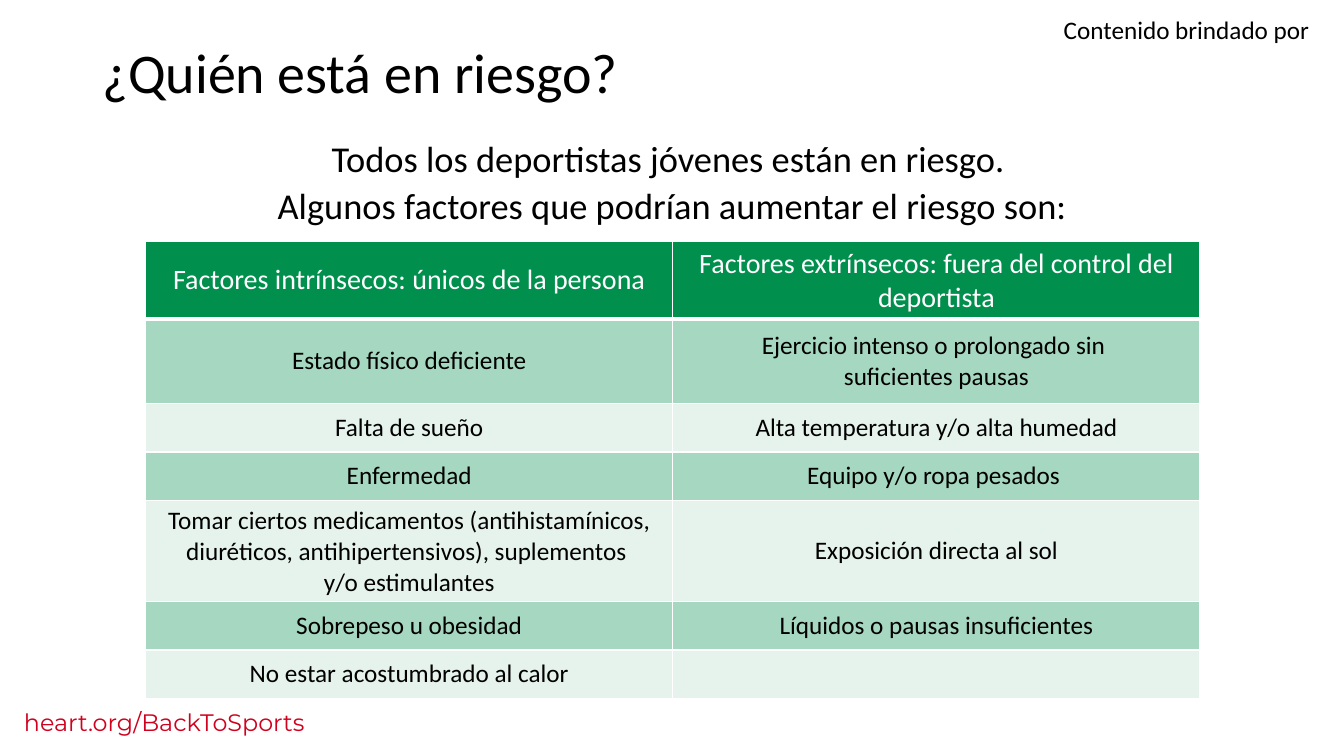
from lxml import etree
from pptx import Presentation
from pptx.dml.color import RGBColor
from pptx.enum import text
from pptx.oxml import ns
from pptx.util import Pt

theme = {
    "font": "Calibri", "link": "Montserrat",
    "black": "000000", "white": "FFFFFF", "red": "D0011E", "green": "008F4C",
    "title": 40, "lead": 26, "head": 20, "body": 18, "foot": 17,
    "dark": 35, "light": 10,
}
mid = text.PP_ALIGN.CENTER
left = text.PP_ALIGN.LEFT


def write(para, words, size, color="black", font="font", align=mid):
    para.alignment = align
    for i, line in enumerate(words.split("\n")):
        if i:
            para.add_line_break()
        run = para.add_run()
        run.text = line
        run.font.size = Pt(theme[size])
        run.font.name = theme[font]
        run.font.color.rgb = RGBColor.from_string(theme[color])


def add_box(x, y, w, h):
    frame = slide.shapes.add_textbox(Pt(x), Pt(y), Pt(w), Pt(h)).text_frame
    frame.word_wrap = True
    return frame


deck = Presentation()
deck.slide_width, deck.slide_height = Pt(960), Pt(540)
slide = deck.slides.add_slide(deck.slide_layouts[6])

foot = add_box(10, 502, 312, 28)
write(foot.paragraphs[0], "heart.org/BackToSports", "foot", "red", "link", left)
credit = add_box(747.5, 6.5, 200, 29)
write(credit.paragraphs[0], "Contenido brindado por", "body")

title = add_box(66, 29, 681, 60).paragraphs[0]
title.line_spacing = 0.9
write(title, "¿Quién está en riesgo?", "title", align=left)

lead = add_box(65, 97, 831, 65)
for i, line in enumerate([
    "Todos los deportistas jóvenes están en riesgo. ",
    "Algunos factores que podrían aumentar el riesgo son:",
]):
    para = lead.add_paragraph() if i else lead.paragraphs[0]
    para.line_spacing = 0.9
    if i:
        para.space_before = Pt(6)
    write(para, line, "lead")

rows = [
    (37.5, "Factores intrínsecos: únicos de la persona",
     "Factores extrínsecos: fuera del control del deportista"),
    (60.5, "Estado físico deficiente",
     "Ejercicio intenso o prolongado sin \nsuficientes pausas"),
    (34.7, "Falta de sueño", "Alta temperatura y/o alta humedad"),
    (34.7, "Enfermedad", "Equipo y/o ropa pesados "),
    (60.5, "Tomar ciertos medicamentos (antihistamínicos, diuréticos, "
     "antihipertensivos), suplementos \ny/o estimulantes",
     "Exposición directa al sol"),
    (34.7, "Sobrepeso u obesidad", "Líquidos o pausas insuficientes"),
    (34.7, "No estar acostumbrado al calor", ""),
]
wide = 376.6
high = sum(row[0] for row in rows)
grid = slide.shapes.add_table(
    len(rows), 2, Pt(104), Pt(172.4), Pt(2 * wide), Pt(high)).table
for col in grid.columns:
    col.width = Pt(wide)

for r, (tall, *cells) in enumerate(rows):
    grid.rows[r].height = Pt(tall)
    for c, words in enumerate(cells):
        cell = grid.cell(r, c)
        cell.vertical_anchor = text.MSO_ANCHOR.MIDDLE
        props = cell._tc.get_or_add_tcPr()
        for side in "LRTB":
            thick = 3 if r == 0 and side == "B" else 1
            edge = etree.SubElement(props, ns.qn(f"a:ln{side}"), w=str(Pt(thick)))
            ink = etree.SubElement(edge, ns.qn("a:solidFill"))
            etree.SubElement(ink, ns.qn("a:srgbClr"), val=theme["white"])
        cell.fill.solid()
        cell.fill.fore_color.rgb = RGBColor.from_string(theme["green"])
        if r:
            tint = theme["dark" if r % 2 else "light"]
            paint = props.find(ns.qn("a:solidFill"))[0]
            etree.SubElement(paint, ns.qn("a:alpha"), val=str(tint * 1000))
        if words:
            look = ("body", "black") if r else ("head", "white")
            write(cell.text_frame.paragraphs[0], words, *look)

deck.save("out.pptx")
